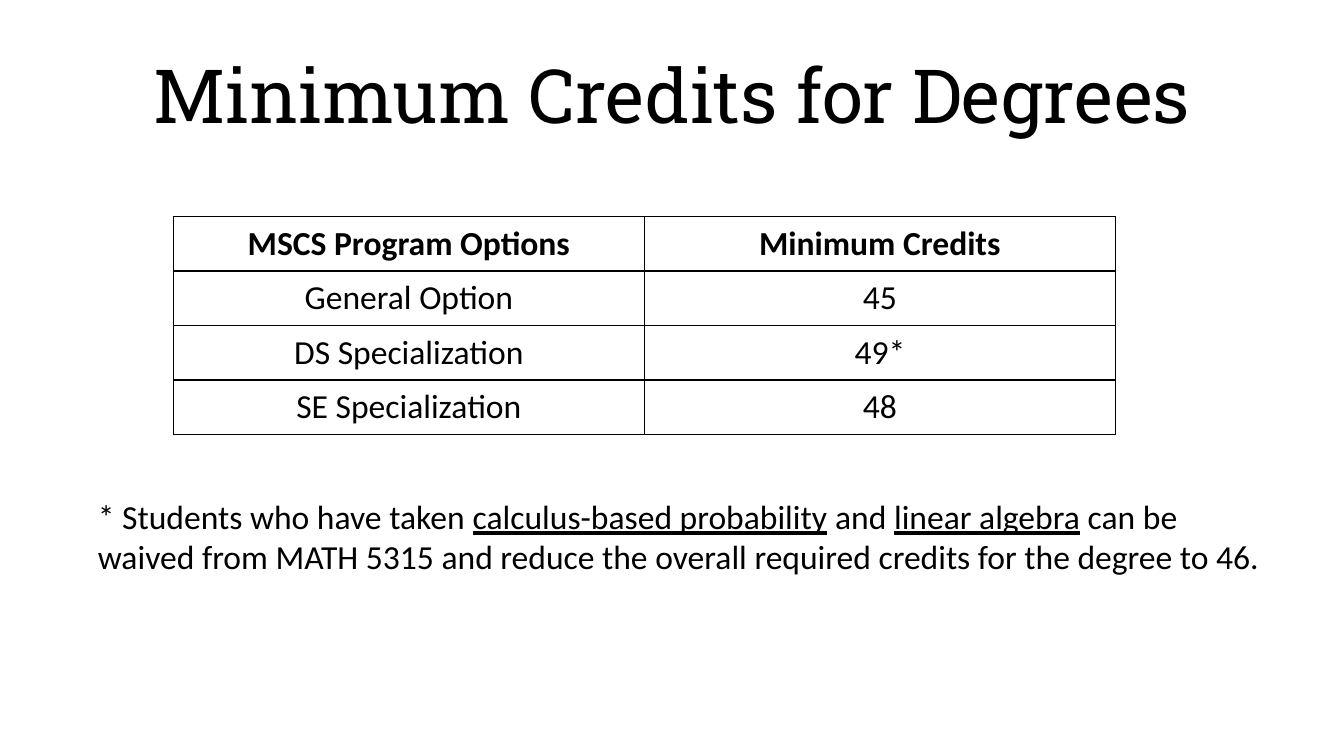
from lxml import etree
from pptx import Presentation
from pptx import util as u
from pptx.dml.color import RGBColor
from pptx.enum import text
from pptx.oxml.ns import qn

BLACK = RGBColor(0x00, 0x00, 0x00)
WIDTH = u.Inches(10)
HEIGHT = WIDTH * 9 // 16
TITLE_FONT, BODY_FONT = "Roboto Slab", "Calibri"
ROWS = [
    ("MSCS Program Options", "Minimum Credits"),
    ("General Option", "45"),
    ("DS Specialization", "49*"),
    ("SE Specialization", "48"),
]
NOTE = [
    ("* Students who have taken ", False),
    ("calculus-based probability", True),
    (" and ", False),
    ("linear algebra", True),
    (" can be waived from MATH 5315 and reduce the overall required "
     "credits for the degree to 46.", False),
]


def style(para, name, size, bold=False):
    """Set the font of a whole paragraph."""
    para.font.name = name
    para.font.size = u.Pt(size)
    para.font.bold = bold
    para.font.color.rgb = BLACK


def add_title(page, wording):
    """Place and format the title placeholder."""
    title = page.shapes.title
    title.left, title.top = u.Inches(0.5), u.Inches(0.23)
    title.width, title.height = u.Inches(9), u.Inches(0.94)
    title.text_frame.text = wording
    title.text_frame.vertical_anchor = text.MSO_ANCHOR.MIDDLE
    para = title.text_frame.paragraphs[0]
    para.alignment = text.PP_ALIGN.CENTER
    style(para, TITLE_FONT, 40)


def add_borders(cell):
    """Draw a thin black line on every side of a cell."""
    properties = cell._tc.get_or_add_tcPr()
    for side in ("a:lnL", "a:lnR", "a:lnT", "a:lnB"):
        line = etree.SubElement(properties, qn(side), w=str(u.Pt(1)))
        fill = etree.SubElement(line, qn("a:solidFill"))
        etree.SubElement(fill, qn("a:srgbClr"), val=str(BLACK))


def add_credit_table(page, rows):
    """Add the bordered table with a bold heading row."""
    table = page.shapes.add_table(
        len(rows), len(rows[0]), u.Inches(1.29), u.Inches(1.61),
        u.Inches(7.01), u.Inches(0.4) * len(rows)).table
    table.first_row = table.horz_banding = False
    for row_index, row in enumerate(rows):
        for column_index, wording in enumerate(row):
            cell = table.cell(row_index, column_index)
            cell.text = wording
            add_borders(cell)
            cell.fill.background()
            para = cell.text_frame.paragraphs[0]
            para.alignment = text.PP_ALIGN.CENTER
            style(para, BODY_FONT, 18, bold=row_index == 0)


def add_note(page, spans):
    """Add the footnote with its underlined terms."""
    box = page.shapes.add_textbox(
        u.Inches(0.63), u.Inches(3.64), u.Inches(8.92), u.Inches(0.71))
    box.text_frame.word_wrap = True
    para = box.text_frame.paragraphs[0]
    style(para, BODY_FONT, 18)
    for wording, underlined in spans:
        span = para.add_run()
        span.text = wording
        if underlined:
            span.font.underline = True


def main():
    """Build the slide and save the deck."""
    deck = Presentation()
    deck.slide_width, deck.slide_height = WIDTH, HEIGHT
    page = deck.slides.add_slide(deck.slide_layouts[5])
    add_title(page, "Minimum Credits for Degrees")
    add_credit_table(page, ROWS)
    add_note(page, NOTE)
    deck.save("out.pptx")


if __name__ == "__main__":
    main()
